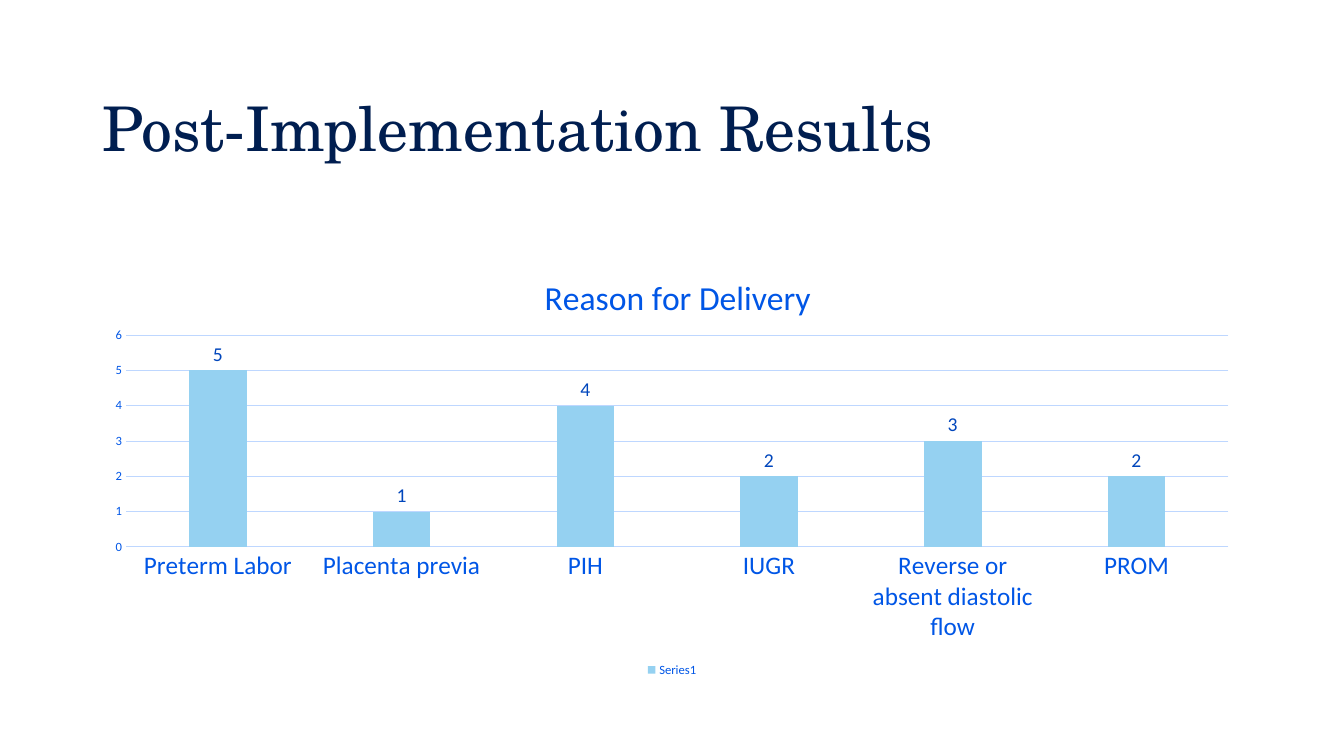
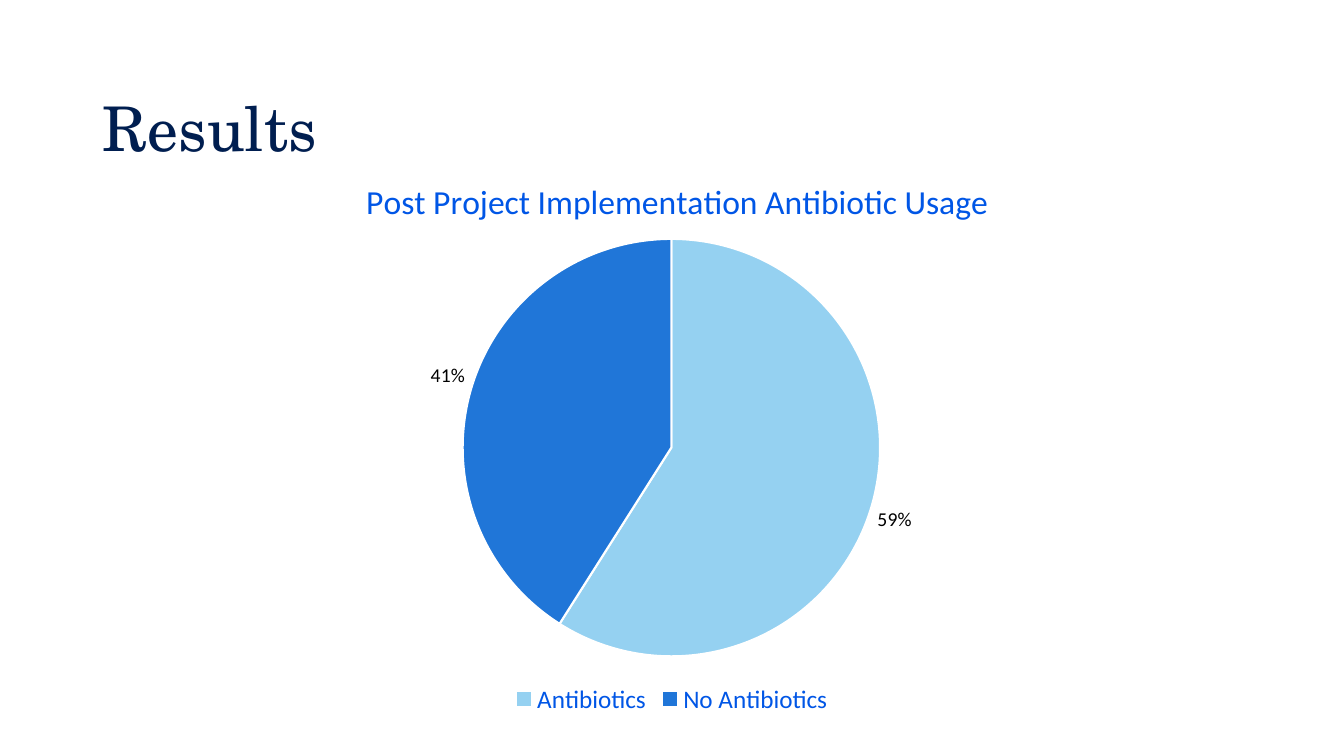
from dataclasses import dataclass

from lxml.etree import SubElement
from pptx import Presentation
from pptx.chart.data import CategoryChartData
from pptx.dml.color import RGBColor
from pptx.enum.chart import XL_CHART_TYPE as ChartType
from pptx.enum.chart import XL_LABEL_POSITION as LabelPosition
from pptx.enum.chart import XL_LEGEND_POSITION as LegendPosition
from pptx.enum.chart import XL_TICK_MARK as TickMark
from pptx.enum.text import MSO_ANCHOR as Anchor
from pptx.oxml.ns import qn
from pptx.util import Cm, Pt

SLIDES = [
    {
        "title": "Post-Implementation Results",
        "chart_title": "Reason for Delivery",
        "kind": ChartType.COLUMN_CLUSTERED,
        "series": "Series1",
        "values": {
            "Preterm Labor": 5,
            "Placenta previa": 1,
            "PIH": 4,
            "IUGR": 2,
            "Reverse or absent diastolic flow": 3,
            "PROM": 2,
        },
        "top": 6.17,
        "height": 11,
        "title_percent": {"x": 38.5, "y": 5.5},
        "plot_percent": {"x": 2.9, "y": 20.7, "w": 95.1, "h": 48.5},
    },
    {
        "title": "Results",
        "chart_title": "Post Project Implementation Antibiotic Usage",
        "kind": ChartType.PIE,
        "series": "Series 1",
        "values": {"Antibiotics": 59, "No Antibiotics": 41},
        "top": 3.68,
        "height": 14.45,
        "title_percent": {"x": 23.1, "y": 4.7},
        "plot_percent": {"x": 31.9, "y": 16.2, "w": 36.1, "h": 72.8},
    },
]


@dataclass(frozen=True)
class Theme:
    heading_font: str = "TeX Gyre Schola"
    body_font: str = "Calibri"
    navy: str = "001E50"
    blue: str = "0056E6"
    label_blue: str = "0046BC"
    grid_blue: str = "BED7FF"
    sky: str = "95D1F1"
    azure: str = "2076D8"
    black: str = "000000"
    white: str = "FFFFFF"
    heading_size: int = 44
    chart_title_size: int = 24
    large_size: int = 18
    label_size: int = 14
    base_size: int = 10
    small_size: int = 9


THEME = Theme()
LEFT, WIDTH = Cm(2.33), Cm(29.21)
TITLE_TOP, TITLE_HEIGHT = Cm(1.59), Cm(3.45)


def style_font(font, size, color, name=THEME.body_font):
    font.name = name
    font.size = Pt(size)
    font.bold = False
    font.color.rgb = RGBColor.from_string(color)


def style_line(line, color, width):
    line.color.rgb = RGBColor.from_string(color)
    line.width = Pt(width)


def fill_solid(format_, color):
    format_.fill.solid()
    format_.fill.fore_color.rgb = RGBColor.from_string(color)


def place_inside(parent, percents, target=None):
    layout = parent.find(qn("c:layout"))
    if layout is None:
        layout = SubElement(parent, qn("c:layout"))
    parent.insert(0 if parent.find(qn("c:tx")) is None else 1, layout)
    manual = SubElement(layout, qn("c:manualLayout"))
    settings = [("layoutTarget", target)] if target else []
    settings += [(f"{side}Mode", "edge") for side in "xy"]
    settings += [(side, str(percent / 100)) for side, percent in percents.items()]
    for tag, value in settings:
        SubElement(manual, qn(f"c:{tag}")).set("val", value)


def add_title(page, text):
    box = page.shapes.add_textbox(LEFT, TITLE_TOP, WIDTH, TITLE_HEIGHT)
    frame = box.text_frame
    frame.word_wrap = True
    frame.vertical_anchor = Anchor.MIDDLE
    para = frame.paragraphs[0]
    para.line_spacing = 0.9
    span = para.add_run()
    span.text = text
    style_font(span.font, THEME.heading_size, THEME.navy, THEME.heading_font)


def add_chart(page, content):
    data = CategoryChartData()
    data.categories = list(content["values"])
    data.add_series(content["series"], list(content["values"].values()))
    frame = page.shapes.add_chart(
        content["kind"], LEFT, Cm(content["top"]), WIDTH, Cm(content["height"]), data
    )
    chart = frame.chart
    style_font(chart.font, THEME.base_size, THEME.navy)

    chart.has_title = True
    span = chart.chart_title.text_frame.paragraphs[0].add_run()
    span.text = content["chart_title"]
    style_font(span.font, THEME.chart_title_size, THEME.blue)

    chart.has_legend = True
    chart.legend.position = LegendPosition.BOTTOM
    chart.legend.include_in_layout = False

    root = chart.element if hasattr(chart, "element") else chart._chartSpace
    place_inside(root.find(".//" + qn("c:title")), content["title_percent"])
    place_inside(root.find(".//" + qn("c:plotArea")), content["plot_percent"], "inner")
    return chart


def add_labels(plot, color):
    plot.has_data_labels = True
    labels = plot.data_labels
    labels.position = LabelPosition.OUTSIDE_END
    style_font(labels.font, THEME.label_size, color)
    return labels


def style_columns(chart):
    plot = chart.plots[0]
    plot.vary_by_categories = False
    plot.gap_width = 219
    plot.overlap = -27
    fill_solid(plot.series[0].format, THEME.sky)
    add_labels(plot, THEME.label_blue).show_value = True
    style_font(chart.legend.font, THEME.small_size, THEME.blue)

    names, scale = chart.category_axis, chart.value_axis
    for axis, size in ((names, THEME.large_size), (scale, THEME.small_size)):
        axis.major_tick_mark = axis.minor_tick_mark = TickMark.NONE
        style_font(axis.tick_labels.font, size, THEME.blue)
    style_line(names.format.line, THEME.grid_blue, 0.75)
    scale.minimum_scale, scale.maximum_scale, scale.major_unit = 0, 6, 1
    scale.format.line.fill.background()
    style_line(scale.major_gridlines.format.line, THEME.grid_blue, 0.75)


def style_pie(chart):
    plot = chart.plots[0]
    plot.vary_by_categories = True
    for index, color in enumerate((THEME.sky, THEME.azure)):
        slice_format = plot.series[0].points[index].format
        fill_solid(slice_format, color)
        style_line(slice_format.line, THEME.white, 1.5)
    labels = add_labels(plot, THEME.black)
    labels.show_value = False
    labels.show_percentage = True
    labels.number_format = "0%"
    labels.number_format_is_linked = False
    style_font(chart.legend.font, THEME.large_size, THEME.blue)


STYLES = {ChartType.COLUMN_CLUSTERED: style_columns, ChartType.PIE: style_pie}


def main():
    deck = Presentation()
    deck.slide_width, deck.slide_height = Cm(33.87), Cm(19.05)
    for content in SLIDES:
        page = deck.slides.add_slide(deck.slide_layouts[6])
        add_title(page, content["title"])
        STYLES[content["kind"]](add_chart(page, content))
    deck.save("out.pptx")


if __name__ == "__main__":
    main()
